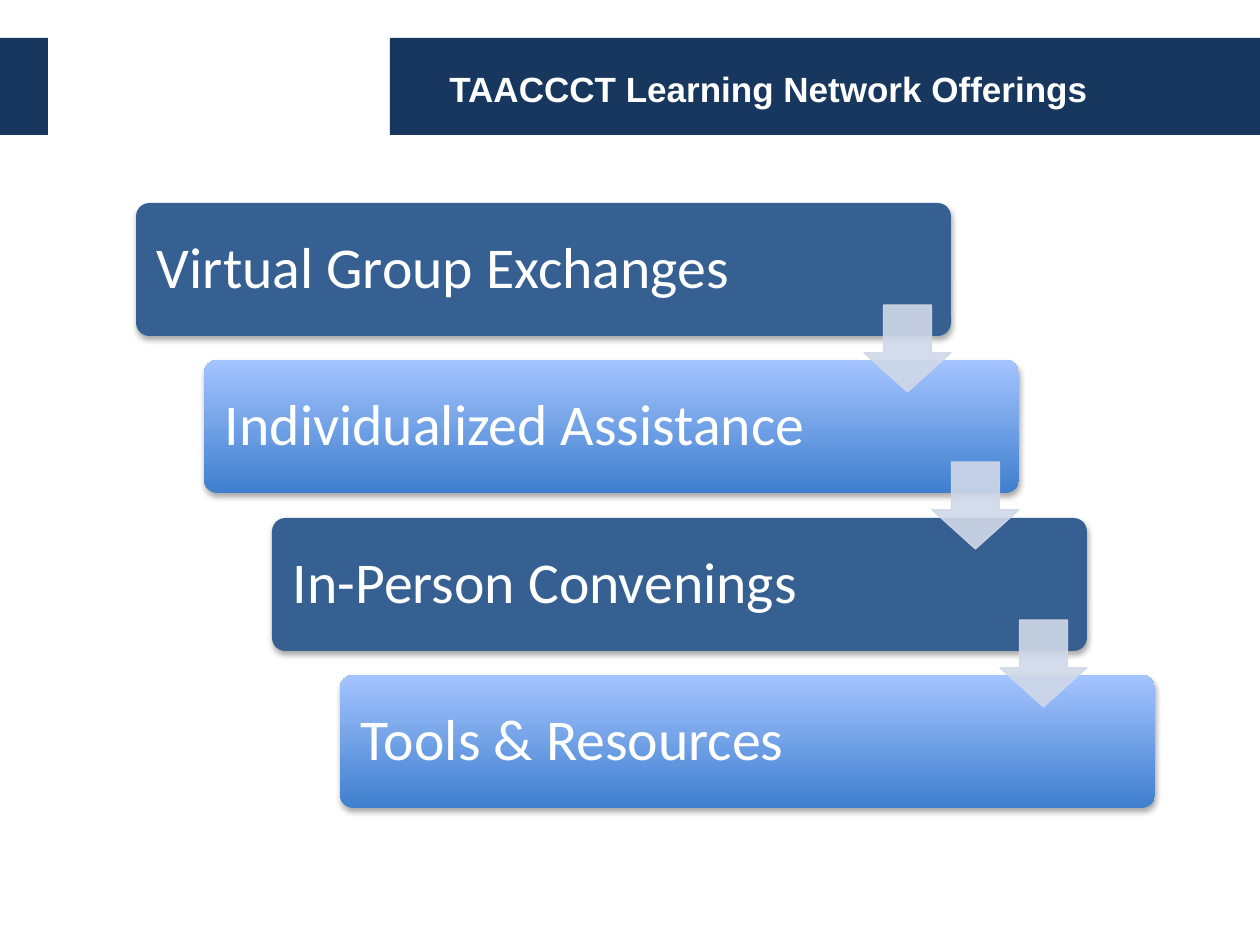
from lxml import etree
from pptx import Presentation
from pptx import util as u
from pptx.dml.color import RGBColor
from pptx.enum import shapes, text
from pptx.oxml import ns

PX = u.Inches(1) / 126
NAVY, BLUE, WHITE, PALE = "17375E", "376092", "FFFFFF", "D0D8E8"
GRADIENT = ("3F7FCE", "A4C4FF")
OFFERINGS = [
    "Virtual Group Exchanges",
    "Individualized Assistance",
    "In-Person Convenings",
    "Tools & Resources",
]


def px(*lengths):
    return [u.Emu(round(length * PX)) for length in lengths]


def rgb(value):
    return RGBColor.from_string(value)


def add_element(parent, tag, **attributes):
    return etree.SubElement(parent, ns.qn(tag), **attributes)


class SlideBuilder:
    heading_font = "Arial"
    body_font = "Calibri"

    def __init__(self, slide):
        self.slide = slide

    def shape(self, kind, place, color, adjustments=()):
        shape = self.slide.shapes.add_shape(kind, *px(*place))
        shape.shadow.inherit = False
        shape.line.fill.background()
        shape.fill.solid()
        shape.fill.fore_color.rgb = rgb(color)
        for index, value in enumerate(adjustments):
            shape.adjustments[index] = value
        return shape

    def band(self, place):
        self.shape(shapes.MSO_SHAPE.RECTANGLE, place, NAVY)

    def card(self, place, gradient):
        card = self.shape(shapes.MSO_SHAPE.ROUNDED_RECTANGLE, place, BLUE, [0.1])
        if gradient:
            card.fill.gradient()
            card.fill.gradient_angle = 90
            for stop, color in zip(card.fill.gradient_stops, GRADIENT):
                stop.color.rgb = rgb(color)
        effects = card._element.spPr.find(ns.qn("a:effectLst"))
        shadow = add_element(effects, "a:outerShdw", blurRad="40000", dist="23000",
                             dir="5400000", rotWithShape="0")
        black = add_element(shadow, "a:srgbClr", val="000000")
        add_element(black, "a:alpha", val="35000")

    def arrow(self, place):
        arrow = self.shape(shapes.MSO_SHAPE.DOWN_ARROW, place, PALE, [0.55, 0.45])
        arrow.line.color.rgb = rgb(PALE)
        arrow.line.width = u.Pt(0.75)
        for color in arrow._element.spPr.iter(ns.qn("a:srgbClr")):
            add_element(color, "a:alpha", val="90000")

    def label(self, place, words, font, size, bold=False, inset=None, spacing=None):
        box = self.slide.shapes.add_textbox(*px(*place))
        frame = box.text_frame
        frame.text = words
        frame.word_wrap = True
        frame.vertical_anchor = text.MSO_ANCHOR.MIDDLE
        if inset is not None:
            margin, = px(inset)
            frame.margin_left = frame.margin_right = margin
            frame.margin_top = frame.margin_bottom = margin
        para = frame.paragraphs[0]
        para.line_spacing = spacing
        span = para.runs[0]
        span.font.name = font
        span.font.size = u.Pt(size)
        span.font.bold = bold
        span.font.color.rgb = rgb(WHITE)


def main():
    deck = Presentation()
    deck.slide_width, deck.slide_height = px(1260, 945)
    page = SlideBuilder(deck.slides.add_slide(deck.slide_layouts[6]))

    page.band((390, 38, 870, 97))
    page.band((0, 38, 48, 97))
    page.label((437, 40, 723, 97), "TAACCCT Learning Network Offerings",
               page.heading_font, 20, bold=True)

    steps = [(68 * index, 315 * index // 2) for index in range(len(OFFERINGS))]
    for index, (words, (across, down)) in enumerate(zip(OFFERINGS, steps)):
        left, top = 136 + across, 203 + down
        page.card((left, top, 815, 133), gradient=index % 2 == 1)
        page.label((left + 4, top + 4, 653, 126), words,
                   page.body_font, 33, inset=17, spacing=0.9)
    for across, down in steps[:-1]:
        page.arrow((864 + across, 305 + down, 87, 87))

    deck.save("out.pptx")


if __name__ == "__main__":
    main()
